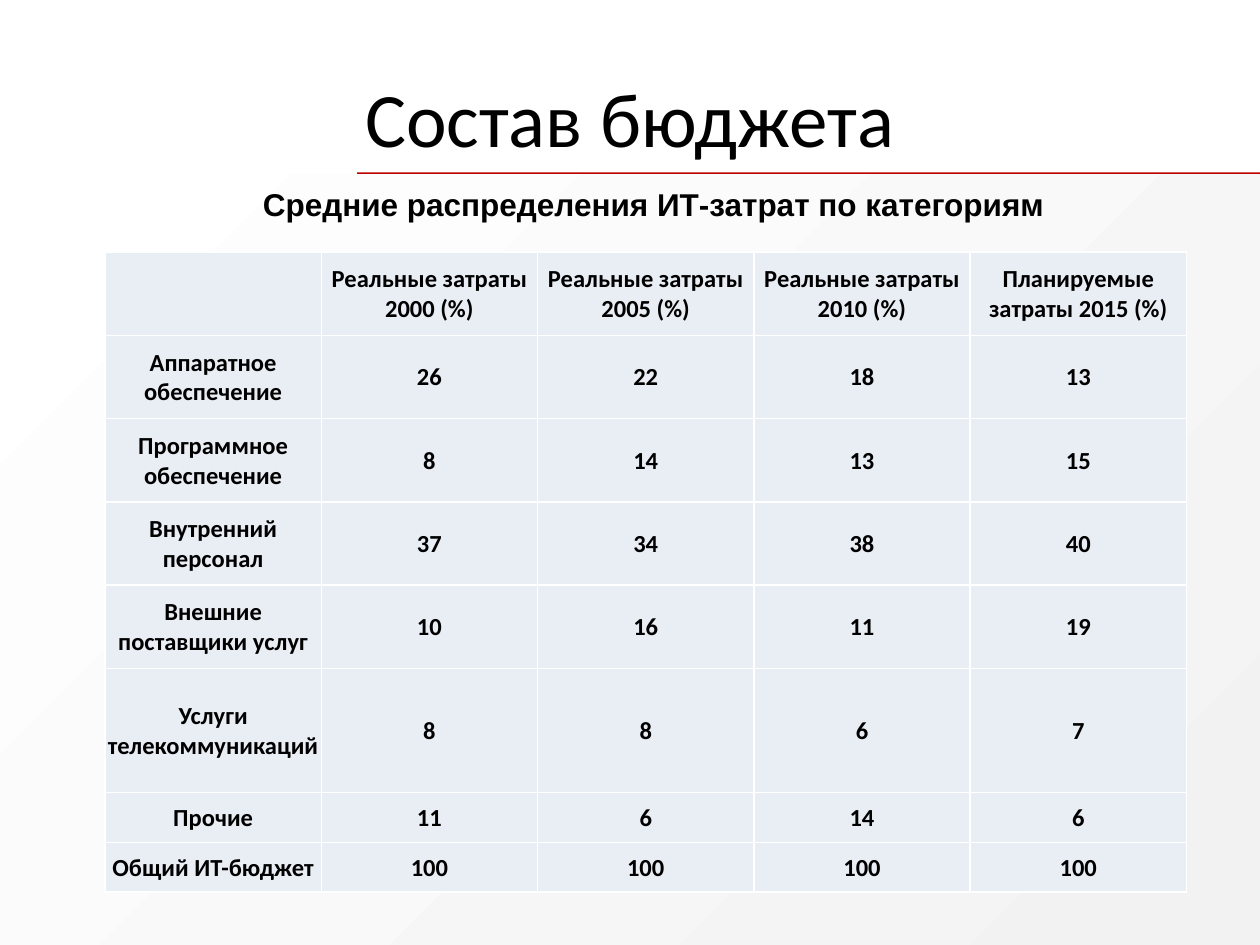
from lxml import etree
from pptx import Presentation
from pptx.dml.color import RGBColor
from pptx.enum.shapes import MSO_SHAPE
from pptx.enum.text import MSO_ANCHOR, PP_ALIGN
from pptx.oxml.ns import qn
from pptx.util import Pt

RECTANGLE = MSO_SHAPE.RECTANGLE
TOP, MIDDLE = MSO_ANCHOR.TOP, MSO_ANCHOR.MIDDLE
CENTER = PP_ALIGN.CENTER
TITLE_ONLY = 5

BLACK = RGBColor(0x00, 0x00, 0x00)
WHITE = RGBColor(0xFF, 0xFF, 0xFF)
LIGHT_GRAY = RGBColor(0xF2, 0xF2, 0xF2)
RED = RGBColor(0xC0, 0x00, 0x00)
CELL_BLUE = RGBColor(0xE9, 0xED, 0xF4)

TITLE_FONT = {"name": "Calibri", "size": Pt(44), "bold": False}
SUBTITLE_FONT = {"name": "Arial", "size": Pt(18), "bold": True}
TABLE_FONT = {"name": "Calibri", "size": Pt(14), "bold": True}

BUDGET = [
    ["", "Реальные затраты 2000 (%)", "Реальные затраты 2005 (%)",
     "Реальные затраты 2010 (%)", "Планируемые затраты 2015 (%)"],
    ["Аппаратное обеспечение", 26, 22, 18, 13],
    ["Программное обеспечение", 8, 14, 13, 15],
    ["Внутренний персонал", 37, 34, 38, 40],
    ["Внешние поставщики услуг", 10, 16, 11, 19],
    ["Услуги телекоммуникаций", 8, 8, 6, 7],
    ["Прочие", 11, 6, 14, 6],
    ["Общий ИТ-бюджет", 100, 100, 100, 100],
]
ROW_HEIGHTS = [47.6] * 5 + [70.8, 28.8, 28.1]


def write_centered(tf, text, font):
    p = tf.paragraphs[0]
    p.alignment = CENTER
    r = p.add_run()
    r.text = text
    for name, value in font.items():
        setattr(r.font, name, value)
    r.font.color.rgb = BLACK


def add_rectangle(slide, left, top, width, height):
    s = slide.shapes.add_shape(RECTANGLE, Pt(left), Pt(top), Pt(width), Pt(height))
    s.shadow.inherit = False
    s.line.fill.background()
    return s


def add_backdrop(slide, left, top, width, height):
    """Add the shaded panel and the red rule along its top edge."""
    rule = add_rectangle(slide, left + 204, top - 1.5, width - 204, 3.6)
    rule.fill.solid()
    rule.fill.fore_color.rgb = RED

    panel = add_rectangle(slide, left, top, width, height)
    panel.fill.gradient()
    panel.fill.gradient_angle = 315
    for stop, color in zip(panel.fill.gradient_stops, (WHITE, LIGHT_GRAY)):
        stop.color.rgb = color


def set_title(slide, left, top, width, height):
    title = slide.shapes.title
    title.left, title.top = Pt(left), Pt(top)
    title.width, title.height = Pt(width), Pt(height)
    title.text_frame.vertical_anchor = MIDDLE
    write_centered(title.text_frame, "Состав бюджета", TITLE_FONT)


def add_subtitle(slide, left, top, width, height):
    s = slide.shapes.add_textbox(Pt(left), Pt(top), Pt(width), Pt(height))
    tf = s.text_frame
    tf.word_wrap = True
    tf.vertical_anchor = TOP
    tf.margin_top = Pt(6)
    write_centered(tf, "Средние распределения ИТ-затрат по категориям", SUBTITLE_FONT)


def set_borders(cell, color, width):
    """Insert the border lines ahead of the cell's fill, as the schema requires."""
    tc_pr = cell._tc.get_or_add_tcPr()
    for index, side in enumerate(("lnL", "lnR", "lnT", "lnB")):
        ln = etree.Element(qn(f"a:{side}"), w=str(Pt(width)))
        fill = etree.SubElement(ln, qn("a:solidFill"))
        etree.SubElement(fill, qn("a:srgbClr"), val=str(color))
        tc_pr.insert(index, ln)


def add_budget_table(slide, left, top, width, height):
    columns = len(BUDGET[0])
    frame = slide.shapes.add_table(len(BUDGET), columns,
                                   Pt(left), Pt(top), Pt(width), Pt(height))
    table = frame.table
    table.first_row = table.horz_banding = False
    for column in table.columns:
        column.width = Pt(width / columns)
    for row, row_height, values in zip(table.rows, ROW_HEIGHTS, BUDGET):
        row.height = Pt(row_height)
        for cell, value in zip(row.cells, values):
            cell.fill.solid()
            cell.fill.fore_color.rgb = CELL_BLUE
            set_borders(cell, WHITE, 1)
            cell.vertical_anchor = MIDDLE
            cell.margin_left = cell.margin_right = cell.margin_top = Pt(0.7)
            cell.margin_bottom = Pt(0)
            if value != "":
                write_centered(cell.text_frame, str(value), TABLE_FONT)


def main():
    prs = Presentation()
    prs.slide_width, prs.slide_height = Pt(720), Pt(540)
    slide = prs.slides.add_slide(prs.slide_layouts[TITLE_ONLY])
    add_backdrop(slide, 0, 100, 720, 440)
    set_title(slide, 36, 21.6, 648, 90)
    add_subtitle(slide, 138, 100, 471, 52.5)
    add_budget_table(slide, 60, 144, 618, sum(ROW_HEIGHTS))
    prs.save("out.pptx")


if __name__ == "__main__":
    main()
